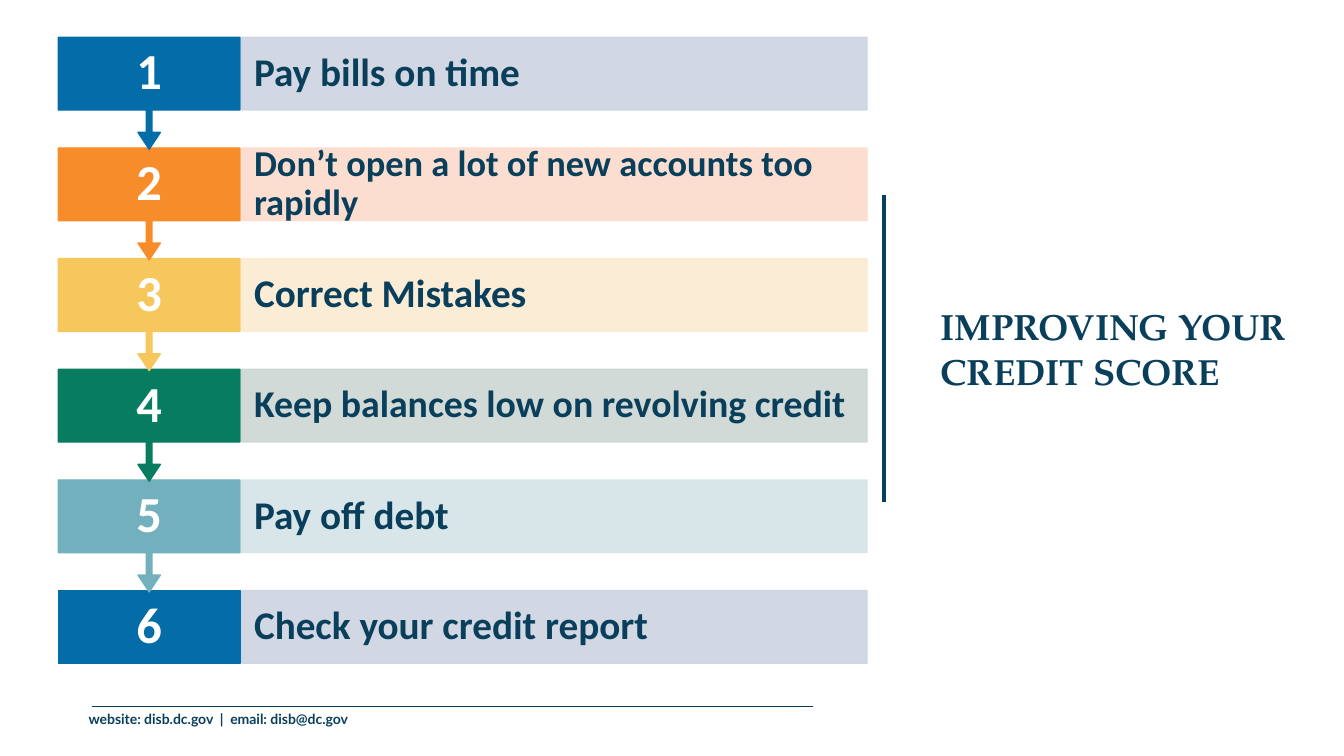
from lxml.etree import SubElement
from pptx import Presentation
from pptx.dml.color import RGBColor
from pptx.enum.shapes import MSO_CONNECTOR, MSO_SHAPE
from pptx.enum.text import MSO_ANCHOR, PP_ALIGN
from pptx.oxml.ns import qn
from pptx.util import Inches, Pt

NAVY = "0A3F5B"
WHITE = "FFFFFF"
# Advice, text size, number colour, band colour
STEPS = [
    ("Pay bills on time", 28, "046DA8", "CCD4E1"),
    ("Don’t open a lot of new accounts too rapidly", 26, "F78D2A", "FCDBCD"),
    ("Correct Mistakes", 28, "F5C75D", "FBEBD2"),
    ("Keep balances low on revolving credit", 27, "077C60", "CCD7D2"),
    ("Pay off debt", 28, "71B0BC", "D5E4E7"),
    ("Check your credit report", 28, "046DA8", "CCD4E1"),
]


def rgb(value):
    return RGBColor.from_string(value)


def write(shape, text, size, color, font, line_spacing=None, align=PP_ALIGN.LEFT):
    frame = shape.text_frame
    frame.word_wrap = True
    paragraph = frame.paragraphs[0]
    paragraph.text = text
    paragraph.alignment = align
    if line_spacing:
        paragraph.line_spacing = line_spacing
    paragraph.font.name = font
    paragraph.font.size = Pt(size)
    paragraph.font.bold = True
    paragraph.font.color.rgb = rgb(color)


def add_text_box(slide, left, top, width, height):
    return slide.shapes.add_textbox(
        Inches(left), Inches(top), Inches(width), Inches(height))


def add_block(slide, kind, left, top, width, height, color, side_inset, opacity=None):
    """Add a filled shape whose text is centred vertically."""
    shape = slide.shapes.add_shape(
        kind, Inches(left), Inches(top), Inches(width), Inches(height))
    shape.shadow.inherit = False
    shape.line.width = Pt(1)
    for fill in (shape.fill, shape.line.fill):
        fill.solid()
        fill.fore_color.rgb = rgb(color)
    if opacity:
        for fill_color in shape._element.spPr.iter(qn("a:srgbClr")):
            SubElement(fill_color, qn("a:alpha")).set("val", str(opacity * 1000))
    frame = shape.text_frame
    frame.margin_left = frame.margin_right = Inches(side_inset)
    frame.margin_top = frame.margin_bottom = 0
    frame.vertical_anchor = MSO_ANCHOR.MIDDLE
    return shape


def add_rule(slide, start, end, weight):
    rule = slide.shapes.add_connector(
        MSO_CONNECTOR.STRAIGHT, *map(Inches, start), *map(Inches, end))
    rule.line.color.rgb = rgb(NAVY)
    rule.line.width = Pt(weight)
    SubElement(rule._element.spPr, qn("a:effectLst"))


def add_steps(slide, left, top, width, height):
    """Stack the numbered steps, each pointing down to the next."""
    row_height, number_width, gap = 0.72, 1.8, 0.02
    pitch = (height - row_height) / (len(STEPS) - 1)
    band_left = left + number_width + gap
    band_width = width - number_width - gap
    # Drawn from the bottom up, so each arrow tip lies over the next row
    for number, (advice, size, color, band_color) in reversed(list(enumerate(STEPS, 1))):
        row_top = top + (number - 1) * pitch
        if number == len(STEPS):
            block = add_block(slide, MSO_SHAPE.RECTANGLE, left, row_top,
                              number_width, row_height, color, 0.14)
        else:
            block = add_block(slide, MSO_SHAPE.DOWN_ARROW_CALLOUT, left, row_top,
                              number_width, 1.11, color, 0.14)
            for index, value in enumerate((0.05, 0.1, 0.15, 0.65)):
                block.adjustments[index] = value
        write(block, str(number), 36, WHITE, "Calibri", 0.9, PP_ALIGN.CENTER)
        band = add_block(slide, MSO_SHAPE.RECTANGLE, band_left, row_top,
                         band_width, row_height, band_color, 0.12, opacity=90)
        write(band, advice, size, NAVY, "Calibri", 0.9)


def add_title(slide, left, top, width, height):
    rule_left = left - 0.46
    add_rule(slide, (rule_left, 1.93), (rule_left, 4.98), 3)
    title = add_text_box(slide, left, top, width, height)
    title.text_frame.vertical_anchor = MSO_ANCHOR.MIDDLE
    write(title, "IMPROVING YOUR CREDIT SCORE", 26, NAVY, "TeX Gyre Pagella", Pt(32))


def add_footer(slide, left, top, width, height):
    contact = add_text_box(slide, left, top, width, height)
    write(contact, "website: disb.dc.gov  |  email: disb@dc.gov", 10, NAVY, "Lato")
    add_rule(slide, (left + 0.13, top + 0.01), (left + 7.28, top + 0.01), 1)


def main():
    presentation = Presentation()
    presentation.slide_width = Inches(13.33)
    presentation.slide_height = Inches(7.5)
    slide = presentation.slides.add_slide(presentation.slide_layouts[6])
    add_footer(slide, 0.78, 7, 3.71, 0.27)
    add_title(slide, 9.23, 0.69, 3.69, 5.53)
    add_steps(slide, 0.58, 0.37, 8.02, 6.21)
    presentation.save("out.pptx")


if __name__ == "__main__":
    main()
